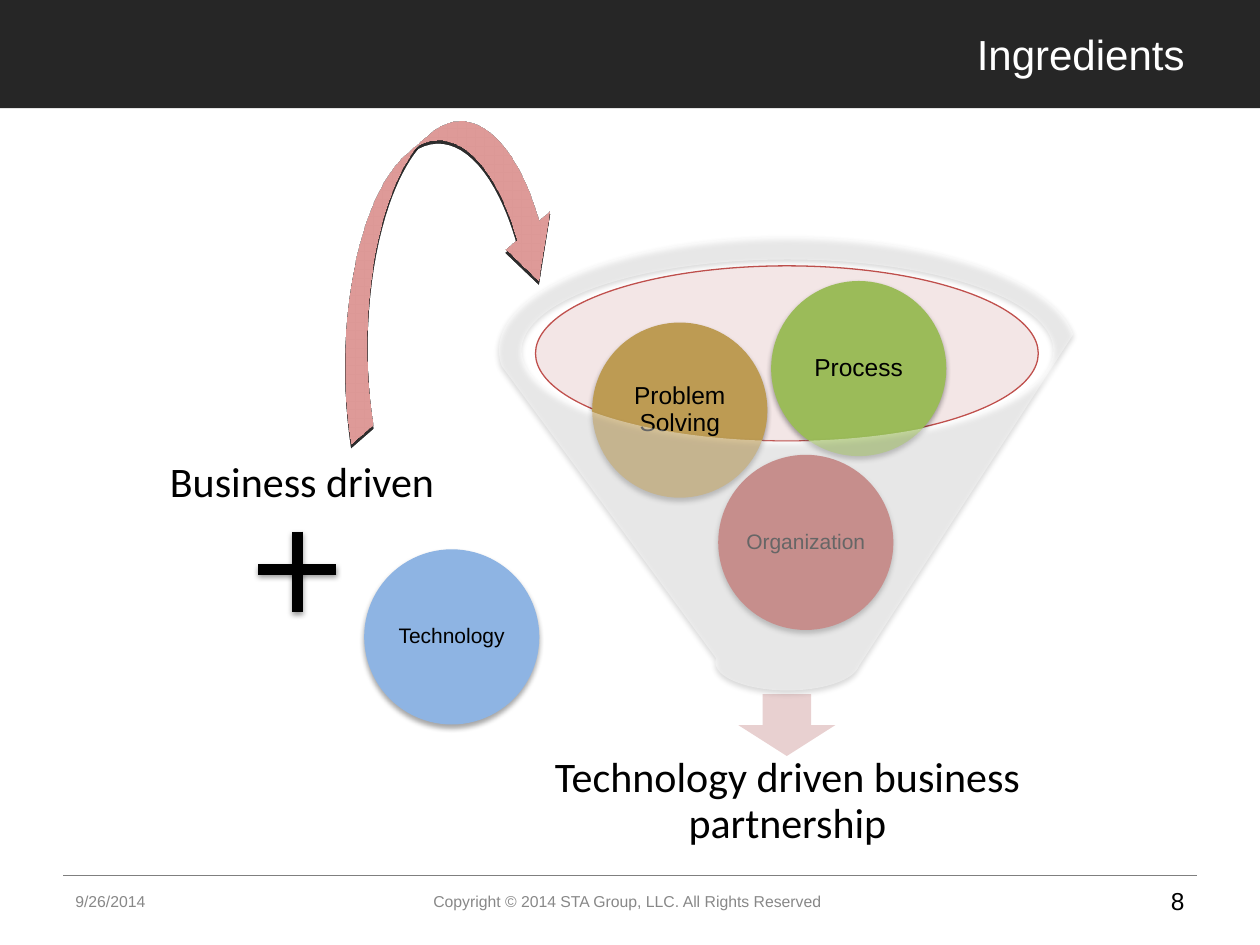
from lxml.etree import SubElement
from pptx import Presentation
from pptx.dml.color import RGBColor
from pptx.enum.shapes import MSO_CONNECTOR, MSO_SHAPE
from pptx.enum.text import MSO_ANCHOR, PP_ALIGN
from pptx.oxml.ns import qn
from pptx.util import Inches, Pt

LEFT, CENTER, RIGHT = PP_ALIGN.LEFT, PP_ALIGN.CENTER, PP_ALIGN.RIGHT
SOFT_SHADOW = (35, 3.1, 1.8)
DEEP_SHADOW = (38, 3.1, 1.6)
CIRCLE_SIZE = 1.39
LABEL_SIZE = 0.98


def color(value):
    return RGBColor.from_string(value)


class SlideBuilder:
    def __init__(self, slide):
        self.slide = slide
        self.font = "Arial"
        self.text_color = "000000"

    def shadow(self, shape, style):
        """Replace the theme shadow with a downward one, or with none."""
        properties = shape._element.spPr
        effects = properties.find(qn("a:effectLst"))
        if effects is None:
            effects = SubElement(properties, qn("a:effectLst"))
        if style:
            opacity, blur, distance = style
            outer = SubElement(effects, qn("a:outerShdw"), blurRad=str(Pt(blur)),
                               dist=str(Pt(distance)), dir="5400000", rotWithShape="0")
            tone = SubElement(outer, qn("a:srgbClr"), val="000000")
            SubElement(tone, qn("a:alpha"), val=str(opacity * 1000))

    def shape(self, kind, bounds, fill, line=None, alpha=None, shadow=None):
        shape = self.slide.shapes.add_shape(kind, *map(Inches, bounds))
        shape.fill.solid()
        shape.fill.fore_color.rgb = color(fill)
        if alpha:
            tone = shape._element.spPr.find(qn("a:solidFill"))[0]
            SubElement(tone, qn("a:alpha"), val=str(alpha * 1000))
        if line:
            shape.line.color.rgb = color(line)
            shape.line.width = Pt(0.75)
        else:
            shape.line.fill.background()
        shape.shadow.inherit = False
        self.shadow(shape, shadow)
        return shape

    def turn_in_space(self, shape, camera):
        """Show the shape through a preset 3-D camera."""
        properties = shape._element.spPr
        scene = SubElement(properties, qn("a:scene3d"))
        SubElement(scene, qn("a:camera"), prst=camera)
        SubElement(scene, qn("a:lightRig"), rig="threePt", dir="t")
        SubElement(properties, qn("a:sp3d"))

    def line(self, start, end, tone, width, shadow=None):
        line = self.slide.shapes.add_connector(
            MSO_CONNECTOR.STRAIGHT, *map(Inches, start + end))
        line.line.color.rgb = color(tone)
        line.line.width = Pt(width)
        self.shadow(line, shadow)

    def text(self, bounds, words, size, align=LEFT, inset=(0.1, 0.05), font=None,
             tone=None, anchor=MSO_ANCHOR.MIDDLE, spacing=None, fill=None):
        if fill:
            box = self.shape(MSO_SHAPE.RECTANGLE, bounds, fill)
        else:
            box = self.slide.shapes.add_textbox(*map(Inches, bounds))
        side, end = map(Inches, inset)
        frame_format = {"word_wrap": True, "vertical_anchor": anchor,
                        "margin_left": side, "margin_right": side,
                        "margin_top": end, "margin_bottom": end}
        for name, value in frame_format.items():
            setattr(box.text_frame, name, value)
        para = box.text_frame.paragraphs[0]
        para.alignment = align
        para.line_spacing = spacing
        span = para.add_run()
        span.text = words
        for name, value in {"size": Pt(size), "name": font or self.font}.items():
            setattr(span.font, name, value)
        span.font.color.rgb = color(tone or self.text_color)

    def circle(self, left, top, words, size, fill, label_fill=None):
        self.shape(MSO_SHAPE.OVAL, (left, top, CIRCLE_SIZE, CIRCLE_SIZE), fill,
                   shadow=SOFT_SHADOW)
        gap = (CIRCLE_SIZE - LABEL_SIZE) / 2
        self.text((left + gap, top + gap, LABEL_SIZE, LABEL_SIZE), words, size,
                  CENTER, inset=(0.01, 0.02), spacing=0.9, fill=label_fill)


def main():
    deck = Presentation()
    deck.slide_width, deck.slide_height = Inches(10), Inches(7.5)
    page = SlideBuilder(deck.slides.add_slide(deck.slide_layouts[6]))

    # Title band and footer rule
    page.shape(MSO_SHAPE.RECTANGLE, (0, 0, 10.01, 0.86), "262626")
    page.line((0.5, 6.95), (9.5, 6.95), "7F7F7F", 0.75)
    page.text((1.97, 0, 7.53, 0.86), "Ingredients", 24, RIGHT, (0.1, 0.1), tone="FFFFFF")

    # Funnel with its ingredients and outcome
    page.shape(MSO_SHAPE.OVAL, (4.25, 2.11, 3.99, 1.39), "E2C2C2", line="C0504D", alpha=40)
    page.shape(MSO_SHAPE.DOWN_ARROW, (5.86, 5.51, 0.77, 0.49), "E8D0D0")
    page.text((3.84, 5.9, 4.82, 0.93), "Technology driven business partnership", 24,
              CENTER, (0.19, 0.19), font="Calibri", spacing=0.9)
    for ingredient in (
        (5.7, 3.61, "Organization", 12, "C0504D"),
        (4.7, 2.56, "Problem Solving", 14, "BD9B53"),
        (6.12, 2.23, "Process", 14, "9BBB59"),
    ):
        page.circle(*ingredient)
    page.shape(MSO_SHAPE.FUNNEL, (3.96, 1.88, 4.58, 3.6), "FFFFFF", alpha=40,
               shadow=DEEP_SHADOW)

    # Business and technology
    page.text((1.25, 3.57, 2.71, 0.5), "Business driven", 24, font="Calibri",
              anchor=MSO_ANCHOR.TOP)
    arrow = page.shape(MSO_SHAPE.CURVED_DOWN_ARROW, (1.36, 1.05, 4.26, 1.81), "D99694",
                       line="000000", shadow=SOFT_SHADOW)
    arrow.rotation = 351.3
    page.turn_in_space(arrow, "isometricOffAxis2Right")
    page.circle(2.89, 4.36, "Technology", 12, "8EB4E3", label_fill="8EB4E3")
    for start, end in (((2.36, 4.22), (2.36, 4.86)), ((2.67, 4.52), (2.05, 4.52))):
        page.line(start, end, "000000", 6, DEEP_SHADOW)

    # Footer
    page.text((0.5, 6.95, 2.33, 0.4), "9/26/2014", 9, tone="888888")
    page.text((2.83, 6.95, 4.33, 0.4),
              "Copyright © 2014 STA Group, LLC. All Rights Reserved ", 9, CENTER, tone="888888")
    page.text((7.17, 6.95, 2.33, 0.4), "8", 14, RIGHT, (0.1, 0.1))

    deck.save("out.pptx")


if __name__ == "__main__":
    main()
